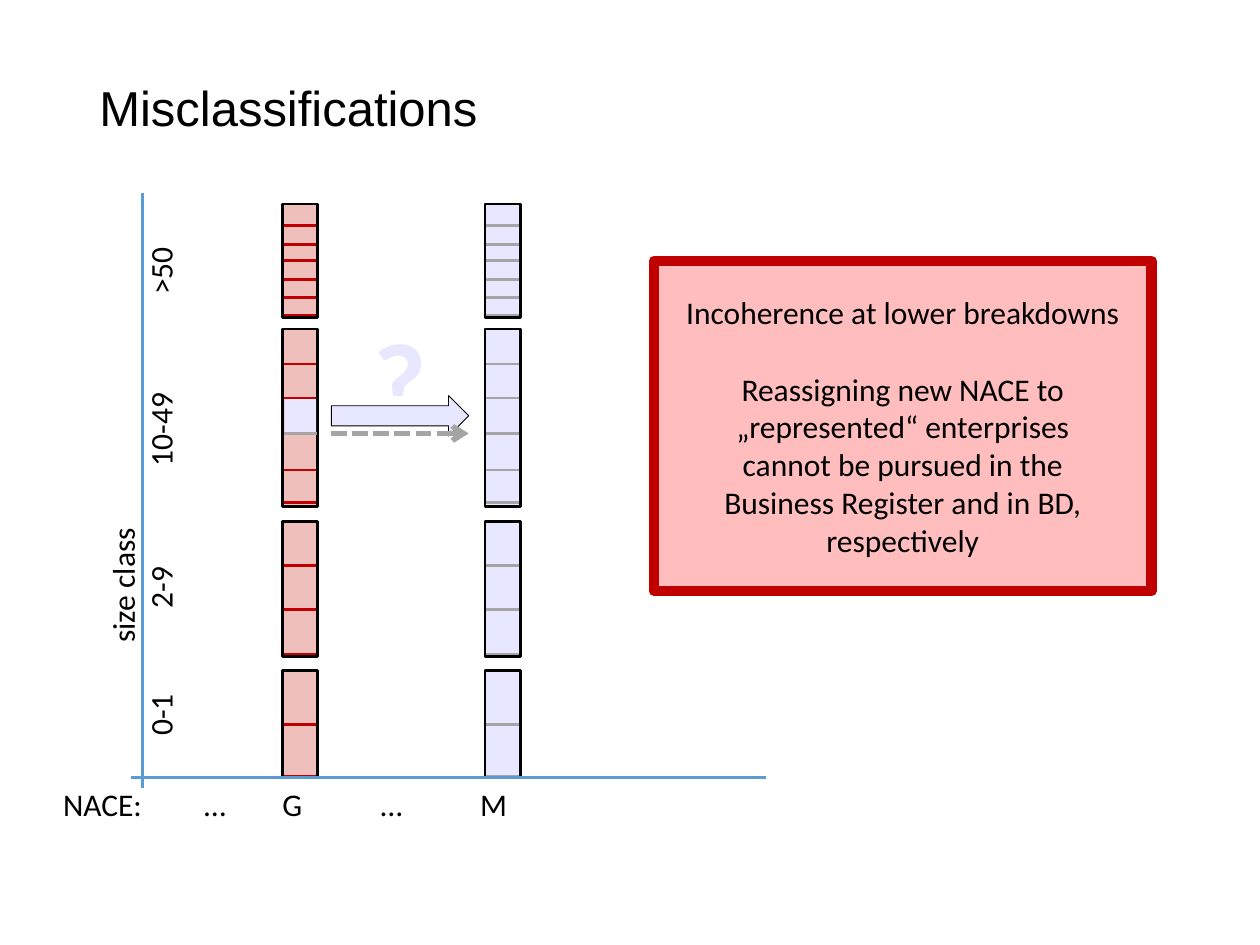
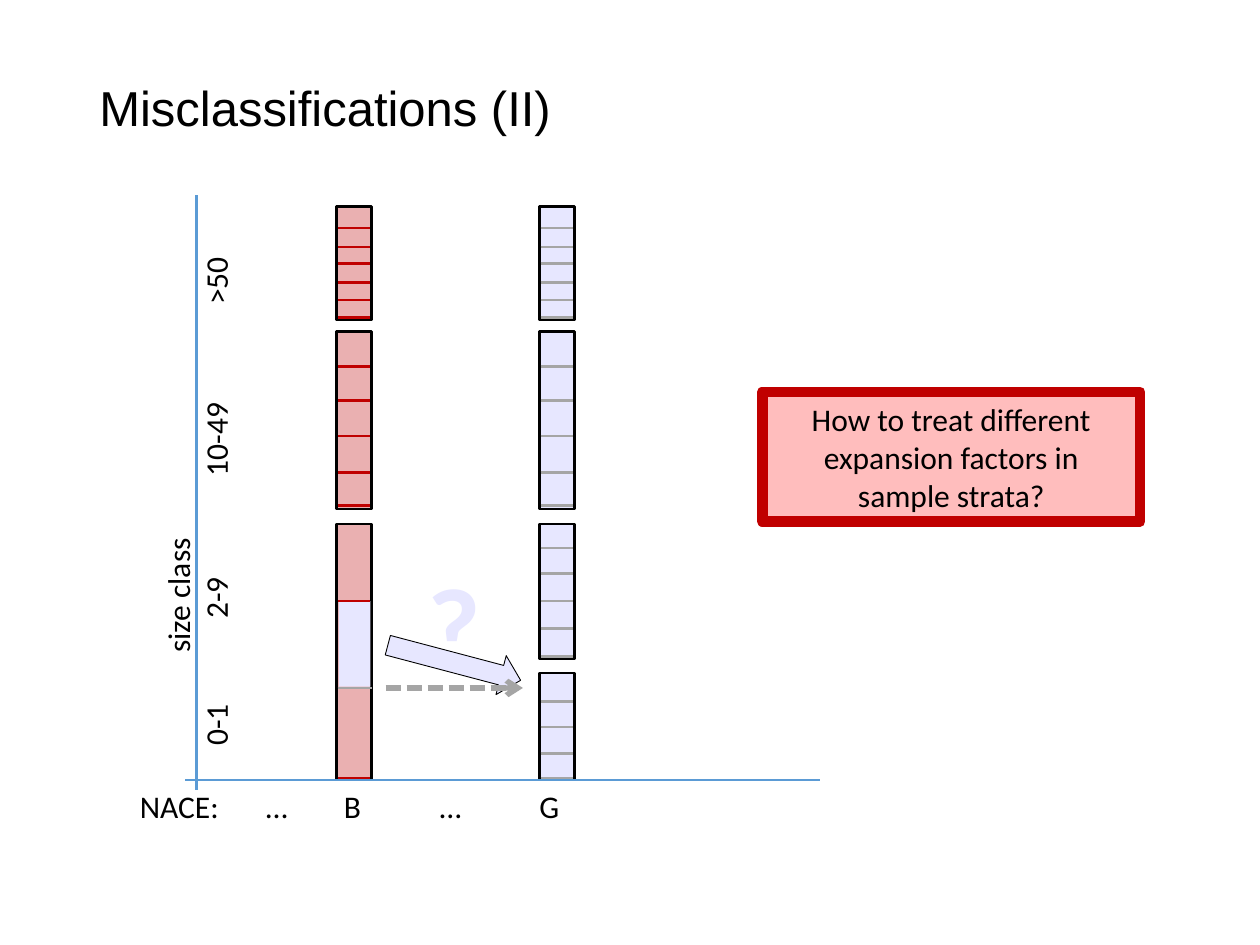
from lxml import etree
from pptx import Presentation
from pptx.dml.color import RGBColor
from pptx.enum.dml import MSO_LINE
from pptx.enum.shapes import MSO_CONNECTOR, MSO_SHAPE
from pptx.enum.text import MSO_ANCHOR, MSO_AUTO_SIZE, PP_ALIGN
from pptx.oxml import parse_xml
from pptx.oxml.ns import nsdecls, qn
from pptx.util import Inches, Pt

BLACK = RGBColor(0x00, 0x00, 0x00)
RED = RGBColor(0xC0, 0x00, 0x00)
GREY = RGBColor(0xA5, 0xA5, 0xA5)
AXIS_BLUE = RGBColor(0x5B, 0x9B, 0xD5)
LILAC = RGBColor(0xE7, 0xE7, 0xFF)
PALE_ROSE = RGBColor(0xEF, 0xBF, 0xBC)
ROSE = RGBColor(0xEA, 0xB0, 0xB1)
CALLOUT_PINK = RGBColor(0xFF, 0xBD, 0xBD)

FROM_X, TO_X, BAR_W, CUT_W = 2.24, 3.85, 0.28, 0.26
OVER_50 = (1.62, 0.9, (1.79, 1.94, 2.07, 2.22, 2.36, 2.5))
FROM_10 = (2.61, 1.41, (2.89, 3.16, 3.44, 3.73, 3.99))
FROM_2 = (4.14, 1.07, (4.49, 4.84, 5.19))
FROM_0 = (5.32, 0.85, (5.75, 6.16))
STRATA = (OVER_50, FROM_10, FROM_2, FROM_0)
MERGED_STRATA = (OVER_50, FROM_10, (4.14, 2.03, (4.75, 5.44, 6.16)))
FINE_STRATA = (OVER_50, FROM_10,
               (4.14, 1.07, (4.33, 4.53, 4.75, 4.97, 5.19)),
               (5.32, 0.85, (5.55, 5.75, 5.96, 6.16)))
SIZE_CLASSES = "\t0-1\t2-9\t10-49\t>50"
SIZE_TABS = (0.17, 1.18, 2.31, 3.67)


def add_box(s, preset, x, y, w, h, fill, line=None, width=1.5):
    """Add a filled preset shape, with an outline if a line colour is given."""
    sp = s.shapes.add_shape(preset, Inches(x), Inches(y), Inches(w), Inches(h))
    sp.shadow.inherit = False
    sp.fill.solid()
    sp.fill.fore_color.rgb = fill
    if line is None:
        sp.line.fill.background()
    else:
        sp.line.color.rgb = line
        sp.line.width = Pt(width)
    return sp


def add_line(s, x1, y1, x2, y2, color, width=1.5):
    """Add a straight line without a shadow."""
    c = s.shapes.add_connector(MSO_CONNECTOR.STRAIGHT, Inches(x1), Inches(y1),
                               Inches(x2), Inches(y2))
    c.line.color.rgb = color
    c.line.width = Pt(width)
    etree.SubElement(c._element.spPr, qn("a:effectLst"))
    return c


def style_text(tf, size=18, font="Calibri", color=BLACK, align=None, bold=None):
    """Format every paragraph and run of a text frame."""
    for p in tf.paragraphs:
        p.alignment = align
        for r in p.runs:
            r.font.size = Pt(size)
            r.font.name = font
            r.font.color.rgb = color
            r.font.bold = bold


def remove_insets(tf):
    """Set all four insets of a text frame to zero."""
    tf.margin_left = tf.margin_right = tf.margin_top = tf.margin_bottom = 0


def add_text(s, x, y, w, h, text):
    """Add a wrapping text box and return its text frame."""
    tf = s.shapes.add_textbox(Inches(x), Inches(y), Inches(w), Inches(h)).text_frame
    tf.word_wrap = True
    tf.text = text
    return tf


def set_tabs(p, stops):
    """Give a paragraph left tab stops at the given inches."""
    tabs = etree.SubElement(p._p.get_or_add_pPr(), qn("a:tabLst"))
    for stop in stops:
        etree.SubElement(tabs, qn("a:tab"), pos=str(Inches(stop)), algn="l")


def add_title(s, text):
    """Add the slide title."""
    tf = add_text(s, 0.69, 0.4, 8.62, 0.95, text)
    tf.vertical_anchor = MSO_ANCHOR.MIDDLE
    tf.paragraphs[0].line_spacing = 0.9
    style_text(tf, 28, "Arial")


def add_column(s, x, dy, strata, fill, cut_color):
    """Add a column of size-class bars, each divided by cut lines."""
    for top, height, cuts in strata:
        add_box(s, MSO_SHAPE.RECTANGLE, x, top + dy, BAR_W, height, fill, BLACK)
        for cut in cuts:
            add_line(s, x + 0.01, cut + dy, x + 0.01 + CUT_W, cut + dy, cut_color)


def add_axes(s, dx, dy):
    """Add the size-class axis and the NACE axis."""
    add_line(s, 1.13 + dx, 1.53 + dy, 1.13 + dx, 6.25 + dy, AXIS_BLUE)
    add_line(s, 1.04 + dx, 6.17 + dy, 6.08 + dx, 6.17 + dy, AXIS_BLUE)


def add_size_labels(s, x, bottom):
    """Add the upward-reading axis title and size classes."""
    length = 4.4
    tf = add_text(s, x, bottom - length, 1, length, "size class\n" + SIZE_CLASSES)
    remove_insets(tf)
    tf._txBody.bodyPr.set("vert", "vert270")
    name, classes = tf.paragraphs
    name._p.get_or_add_pPr().set("marL", str(Inches(0.91)))
    set_tabs(classes, SIZE_TABS)
    style_text(tf)


def add_nace_labels(s, x, y, codes, stops):
    """Add the NACE codes below the horizontal axis."""
    tf = add_text(s, x, y, 5.58, 0.5, "\t".join(("NACE:", "…", codes[0], "…", codes[1])))
    remove_insets(tf)
    set_tabs(tf.paragraphs[0], stops)
    style_text(tf)


def add_moved_units(s, dx, dy, top, bottom):
    """Mark the misclassified part of the first column and its dashed arrow."""
    x = FROM_X + dx
    add_box(s, MSO_SHAPE.RECTANGLE, x + 0.02, top + dy, 0.25, bottom - top - 0.01, LILAC)
    add_line(s, x + 0.01, top + dy, x + 0.01 + CUT_W, top + dy, RED)
    add_line(s, x + 0.01, bottom + dy, x + BAR_W, bottom + dy, GREY)
    c = add_line(s, 2.63 + dx, bottom + dy, 3.72 + dx, bottom + dy, GREY, 3)
    c.line.dash_style = MSO_LINE.SQUARE_DOT
    etree.SubElement(c.line._get_or_add_ln(), qn("a:tailEnd"), type="arrow")


def add_block_arrow(s, x, y, rotation):
    """Add the block arrow between the columns."""
    sp = add_box(s, MSO_SHAPE.RIGHT_ARROW, x, y, 1.09, 0.32, LILAC, BLACK, 0.5)
    sp.rotation = rotation


def add_question_mark(s, x, y):
    """Add the large outlined question mark."""
    tf = add_text(s, x, y, 0.63, 1.21, "?")
    tf.word_wrap = False
    tf.auto_size = MSO_AUTO_SIZE.SHAPE_TO_FIT_TEXT
    style_text(tf, 66, color=LILAC, align=PP_ALIGN.CENTER, bold=True)
    outline = parse_xml(f'<a:ln {nsdecls("a")} w="12700"><a:solidFill>'
                        '<a:srgbClr val="3A5274"/></a:solidFill></a:ln>')
    tf.paragraphs[0].runs[0].font._element.insert(0, outline)


def add_callout(s, x, y, w, h, text):
    """Add the red-framed message box and return its text frame."""
    sp = add_box(s, MSO_SHAPE.RECTANGLE, x, y, w, h, CALLOUT_PINK, RED, 6)
    tf = sp.text_frame
    tf.word_wrap = False
    tf.vertical_anchor = MSO_ANCHOR.MIDDLE
    remove_insets(tf)
    tf.text = text
    style_text(tf, align=PP_ALIGN.CENTER)
    return tf


def add_diagram_slide(prs, title, dx, dy, strata, from_fill, moved, arrow, mark_y):
    """Add a slide with the title, axes, both columns and the move between them."""
    s = prs.slides.add_slide(prs.slide_layouts[6])
    add_title(s, title)
    add_block_arrow(s, 2.63 + dx, *arrow)
    add_column(s, FROM_X + dx, dy, strata[0], from_fill, RED)
    add_column(s, TO_X + dx, dy, strata[1], LILAC, GREY)
    add_moved_units(s, dx, dy, *moved)
    add_question_mark(s, 2.86 + dx, mark_y)
    add_axes(s, dx, dy)
    return s


def main():
    """Build both slides and save the presentation."""
    prs = Presentation()
    prs.slide_width, prs.slide_height = Inches(10), Inches(7.5)

    s = add_diagram_slide(prs, "Misclassifications", 0, 0, (STRATA, STRATA),
                          PALE_ROSE, (3.16, 3.44), (3.14, 0), 2.4)
    add_size_labels(s, 0.82, 6.01)
    add_nace_labels(s, 0.5, 6.23, "GM", (1.12, 1.74, 2.52, 3.31))
    tf = add_callout(s, 5.19, 2.07, 3.95, 2.62,
                     "Incoherence at lower breakdowns\n"
                     "Reassigning new NACE to\n„represented“ enterprises\n"
                     "cannot be pursued in the\nBusiness Register and in BD,\n"
                     "respectively")
    tf.paragraphs[1].space_before = Pt(22)

    s = add_diagram_slide(prs, "Misclassifications (II)", 0.43, 0.02,
                          (MERGED_STRATA, FINE_STRATA), ROSE,
                          (4.75, 5.44), (5.1, 14.8), 4.35)
    add_size_labels(s, 1.26, 6.09)
    add_nace_labels(s, 1.11, 6.25, "BG", (1, 1.62, 2.38, 3.17))
    add_callout(s, 6.05, 3.11, 3, 1.03,
                "How to treat different\vexpansion factors in\vsample strata?")

    prs.save("out.pptx")


if __name__ == "__main__":
    main()
